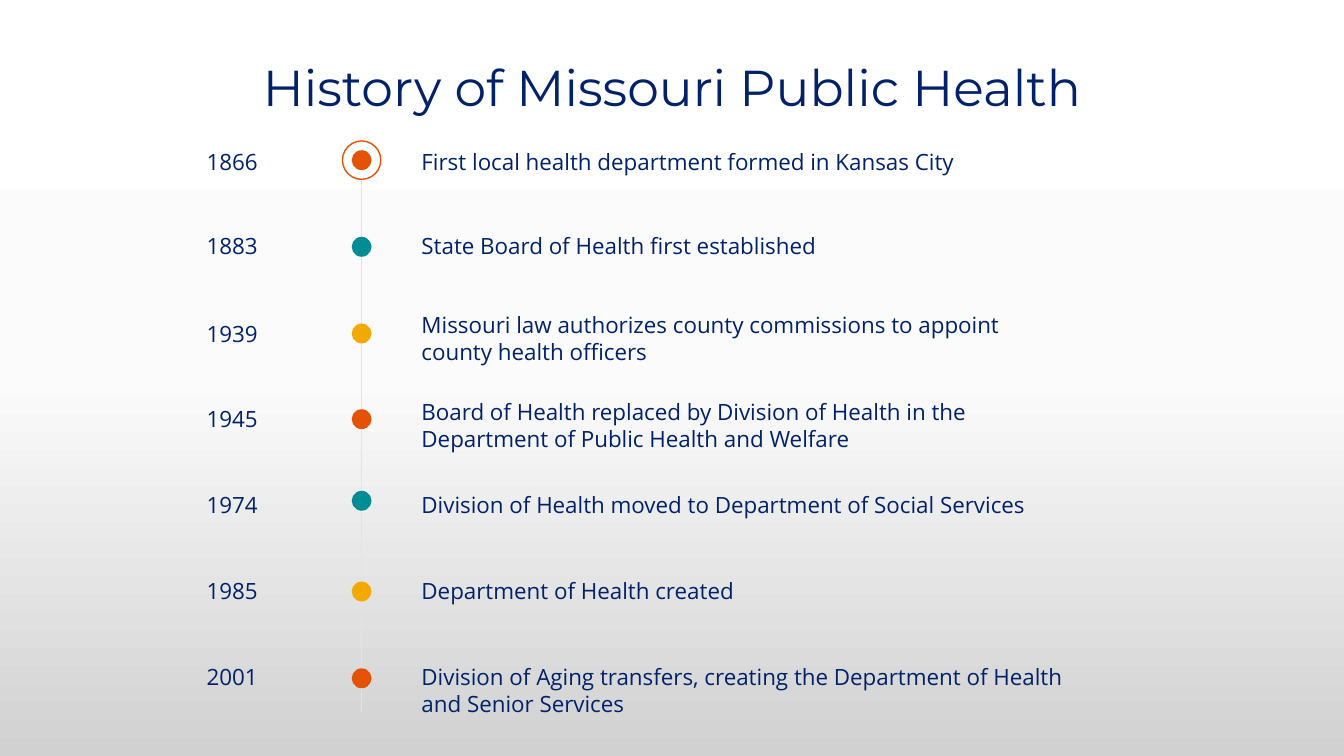
from copy import deepcopy

from lxml.etree import SubElement
from pptx import Presentation
from pptx.dml.color import RGBColor
from pptx.enum.shapes import MSO_CONNECTOR, MSO_SHAPE
from pptx.enum.text import MSO_ANCHOR, MSO_AUTO_SIZE, PP_ALIGN
from pptx.oxml.ns import qn
from pptx.util import Pt

COLORS = {
    "navy": "012169",
    "orange": "E35205",
    "teal": "008C95",
    "gold": "F2A900",
    "pale blue": "D7E3FF",
    "white": "FFFFFF",
}
BACKGROUND_STOPS = [(0, "FFFFFF"), (0.5, "FBFBFB"), (1, "D1D1D1")]
DOT_COLORS = ["orange", "teal", "gold"]

YEAR_LEFT, YEAR_WIDTH = 107.5, 116.6
EVENT_LEFT, EVENT_WIDTH = 294, 479.5
LINE_HEIGHT = 26.6
AXIS, DOT_SIZE, RING_SIZE = 258.3, 14.2, 27.4

# Year, event, then the tops of the year, the event and the dot
MILESTONES = [
    ("1866", "First local health department formed in Kansas City", 102.2, 102.2, 107.3),
    ("1883", "State Board of Health first established", 162, 162, 169.2),
    ("1939", "Missouri law authorizes county commissions to appoint county health officers",
     225.4, 218.9, 231.1),
    ("1945", "Board of Health replaced by Division of Health in the\n"
     "Department of Public Health and Welfare", 285.8, 280.8, 292.3),
    ("1974", "Division of Health moved to Department of Social Services", 347, 347, 350.6),
    ("1985", "Department of Health created", 409, 409, 415.4),
    ("2001", "Division of Aging transfers, creating the Department of Health and Senior Services",
     470.2, 470.2, 477.4),
]


def rgb(name):
    return RGBColor.from_string(COLORS[name])


def set_font(paragraph, name, size):
    paragraph.font.name = name
    paragraph.font.size = Pt(size)
    paragraph.font.color.rgb = rgb("navy")


def set_background(slide):
    fill = slide.background.fill
    fill.gradient()
    fill.gradient_angle = 270
    first_stop = slide.element.find(".//" + qn("a:gs"))
    first_stop.addnext(deepcopy(first_stop))
    for stop, (position, color) in zip(fill.gradient_stops, BACKGROUND_STOPS):
        stop.position = position
        stop.color.rgb = RGBColor.from_string(color)


def set_title(slide, text):
    title = slide.shapes.title
    title.left, title.top, title.width, title.height = Pt(66), Pt(29.5), Pt(828), Pt(70)
    title.text_frame.text = text
    title.text_frame.vertical_anchor = MSO_ANCHOR.MIDDLE
    paragraph = title.text_frame.paragraphs[0]
    paragraph.alignment = PP_ALIGN.CENTER
    paragraph.line_spacing = 0.9
    set_font(paragraph, "Montserrat", 36)


def add_axis(slide):
    axis = slide.shapes.add_connector(
        MSO_CONNECTOR.STRAIGHT, Pt(AXIS), Pt(107.3), Pt(AXIS), Pt(509))
    axis.line.color.rgb = rgb("pale blue")
    axis.line.width = Pt(1)
    SubElement(axis.element.spPr, qn("a:effectLst"))


def add_circle(slide, center_y, size, fill, outline=None):
    """Add a circle centred on the timeline axis."""
    circle = slide.shapes.add_shape(
        MSO_SHAPE.OVAL, Pt(AXIS - size / 2), Pt(center_y - size / 2), Pt(size), Pt(size))
    circle.shadow.inherit = False
    circle.fill.solid()
    circle.fill.fore_color.rgb = rgb(fill)
    if outline:
        circle.line.color.rgb = rgb(outline)
        circle.line.width = Pt(1)
    else:
        circle.line.fill.background()


def add_text(slide, text, left, top, width, alignment):
    box = slide.shapes.add_textbox(Pt(left), Pt(top), Pt(width), Pt(LINE_HEIGHT))
    frame = box.text_frame
    frame.word_wrap = True
    frame.auto_size = MSO_AUTO_SIZE.SHAPE_TO_FIT_TEXT
    frame.text = text
    for paragraph in frame.paragraphs:
        paragraph.alignment = alignment
        set_font(paragraph, "Open Sans", 16)


def main():
    presentation = Presentation()
    presentation.slide_width, presentation.slide_height = Pt(960), Pt(540)
    slide = presentation.slides.add_slide(presentation.slide_layouts[5])
    set_background(slide)
    set_title(slide, "History of Missouri Public Health")
    add_axis(slide)
    for index, (year, event, year_top, event_top, dot_top) in enumerate(MILESTONES):
        center_y = dot_top + DOT_SIZE / 2
        if index == 0:
            add_circle(slide, center_y, RING_SIZE, "white", "orange")
        add_circle(slide, center_y, DOT_SIZE, DOT_COLORS[index % len(DOT_COLORS)])
        add_text(slide, year, YEAR_LEFT, year_top, YEAR_WIDTH, PP_ALIGN.CENTER)
        add_text(slide, event, EVENT_LEFT, event_top, EVENT_WIDTH, PP_ALIGN.LEFT)
    presentation.save("out.pptx")


if __name__ == "__main__":
    main()
